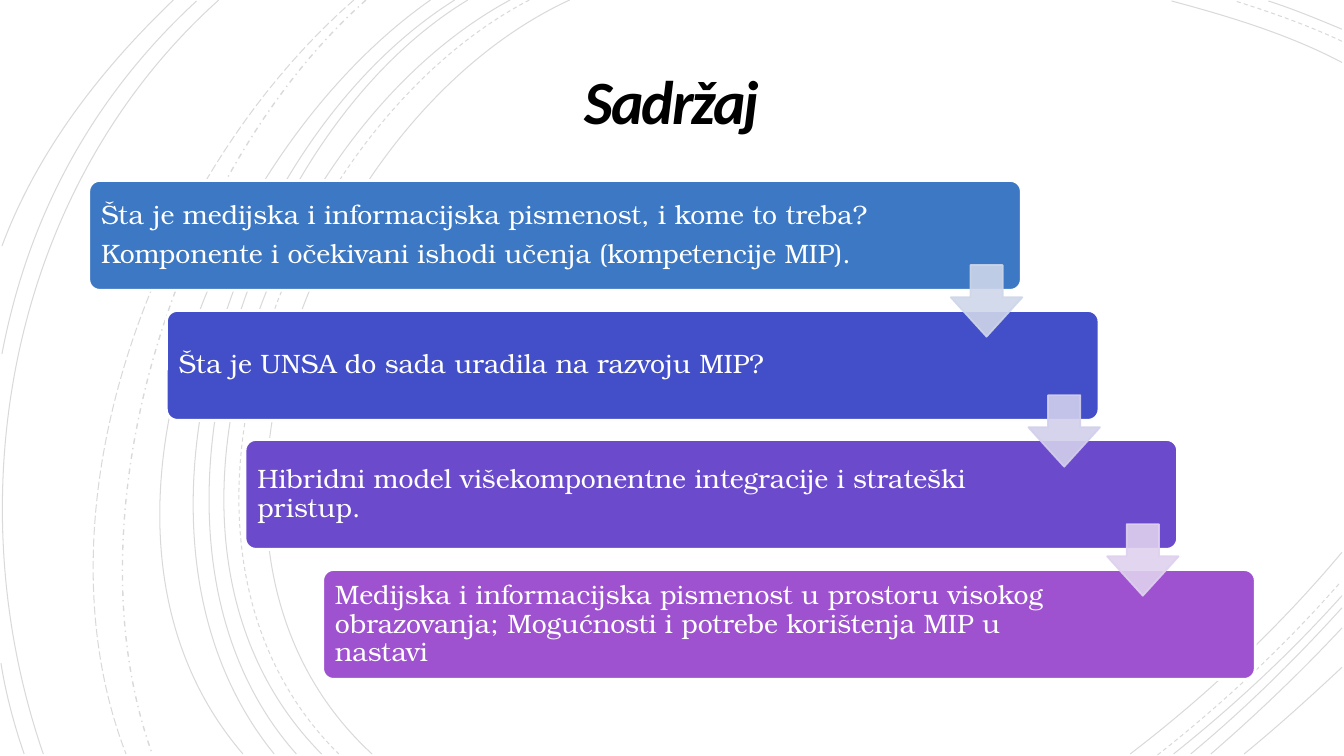
from lxml import etree
from pptx import Presentation, util as u
from pptx.dml import color
from pptx.enum import dml, shapes, text
from pptx.oxml import ns

DASH = dml.MSO_LINE
KIND = shapes.MSO_SHAPE
HALIGN = text.PP_ALIGN


def px(n):
    return u.Emu(n * 9144)  # 100 px to the inch


def rgb(code):
    return color.RGBColor.from_string(code)


def paint(fill, code, alpha=100):
    fill.solid()
    fill.fore_color.rgb = rgb(code)
    if alpha < 100:
        tint = fill._xPr.find(ns.qn("a:solidFill"))[0]
        etree.SubElement(tint, ns.qn("a:alpha"), val=str(alpha * 1000))


def write(shape, lines, font="TeX Gyre Bonum", size=19, ink="FFFFFF", bold=False,
          slant=False, align=HALIGN.LEFT, lead=0.9, after=0, track=0,
          pad=(8, 8, 8, 8)):
    frame = shape.text_frame
    frame.word_wrap = True
    frame.vertical_anchor = text.MSO_ANCHOR.MIDDLE
    (frame.margin_left, frame.margin_top,
     frame.margin_right, frame.margin_bottom) = map(px, pad)
    for i, line in enumerate(lines):
        para = frame.add_paragraph() if i else frame.paragraphs[0]
        para.alignment, para.line_spacing = align, lead
        para.space_after = u.Pt(after)
        run = para.add_run()
        run.text = line
        face = run.font
        face.name, face.size = font, u.Pt(size)
        face.bold, face.italic = bold, slant
        face.color.rgb = rgb(ink)
        if track:
            face._element.set("spc", str(track))


class Deck:
    line = "000000"
    faint = 15

    def __init__(self, wide, high):
        self.show = Presentation()
        self.show.slide_width, self.show.slide_height = px(wide), px(high)
        self.page = self.show.slides.add_slide(self.show.slide_layouts[6])

    def curve(self, points, dash=DASH.SOLID, width=0.75):
        """Draw a cubic curve from start, two handles and end."""
        pen = self.page.shapes.build_freeform(*points[0], scale=9144)
        pen.add_line_segments(points[1:], close=False)
        shape = pen.convert_to_shape()
        shape.shadow.inherit = False
        shape.fill.background()
        paint(shape.line.fill, self.line, self.faint)
        shape.line.width, shape.line.dash_style = u.Pt(width), dash
        # Merge the three segments into one Bezier segment
        track = shape._element.find(".//" + ns.qn("a:path"))
        bend = etree.Element(ns.qn("a:cubicBezTo"))
        for step in track.findall(ns.qn("a:lnTo")):
            bend.append(step[0])
            track.remove(step)
        track.append(bend)

    def label(self, box, lines, **style):
        shape = self.page.shapes.add_textbox(*map(px, box))
        write(shape, lines, **style)

    def block(self, kind, box, adjust, fill, edge, width, alpha=100):
        shape = self.page.shapes.add_shape(kind, *map(px, box))
        shape.shadow.inherit = False
        for i, part in enumerate(adjust):
            shape.adjustments[i] = part
        paint(shape.fill, fill, alpha)
        paint(shape.line.fill, edge, alpha)
        shape.line.width = u.Pt(width)
        return shape


# Background curves: start, two handles, end
SOLID = [
    [(565, 0), (315, 115), (143, 540), (369, 748)],
    [(1331, 62), (1278, 34), (1218, 16), (1162, 1)],
    [(1121, 748), (1197, 690), (1269, 622), (1331, 548)],
    [(506, 0), (270, 127), (110, 537), (319, 748)],
    [(1331, 29), (1307, 19), (1283, 9), (1258, 1)],
    [(1164, 748), (1223, 701), (1280, 648), (1331, 591)],
    [(464, 0), (244, 133), (110, 541), (294, 748)],
    [(1181, 748), (1234, 704), (1284, 655), (1331, 603)],
    [(451, 0), (231, 138), (97, 533), (272, 748)],
    [(1201, 748), (1246, 709), (1290, 667), (1331, 623)],
    [(427, 0), (217, 147), (53, 529), (241, 748)],
    [(1234, 748), (1267, 721), (1299, 692), (1331, 662)],
    [(217, 0), (11, 185), (-46, 490), (43, 748)],
    [(195, 1), (92, 96), (28, 214), (2, 351)],
    [(1, 658), (6, 689), (14, 719), (24, 748)],
    [(172, 0), (100, 69), (37, 150), (2, 244)],
]
DASHED = [
    [(525, 0), (285, 125), (123, 537), (336, 748)],
    [(1331, 41), (1297, 25), (1260, 12), (1225, 1)],
    [(1148, 749), (1213, 698), (1275, 640), (1330, 577)],
]
# Steps: bar colour, right padding, lines
STEPS = [
    ("3C78C3", 127, ["Šta je medijska i informacijska pismenost, i kome to treba?",
                     "Komponente i očekivani ishodi učenja (kompetencije MIP)."]),
    ("434FC8", 156, ["Šta je UNSA do sada uradila na razvoju MIP?"]),
    ("6C4ACC", 156, ["Hibridni model višekomponentne integracije i strateški pristup."]),
    ("9F52D0", 156, ["Medijska i informacijska pismenost u prostoru visokog "
                     "obrazovanja; Mogućnosti i potrebe korištenja MIP u nastavi"]),
]
ARROWS = ["CED6E9", "D2CFEC", "DFD1EE"]


def shift(i):
    return round(i * 77.33), round(i * 128.67)


def main():
    deck = Deck(1333, 750)

    # Background
    for points in SOLID:
        deck.curve(points)
    for points in DASHED:
        deck.curve(points, DASH.DASH)
    deck.curve([(363, 0), (176, 166), (65, 509), (151, 748)], DASH.DASH_DOT, 1)
    deck.curve([(351, 0), (157, 169), (29, 499), (125, 748)], DASH.LONG_DASH)

    # Title
    deck.label((192, 62, 949, 86), ["Sadržaj"], font="Calibri", size=44,
               ink="000000", bold=True, slant=True, align=HALIGN.CENTER,
               lead=0.85, track=-150, pad=(25, 25, 25, 25))

    # Staircase of bars
    for i, (fill, right, lines) in enumerate(STEPS):
        dx, dy = shift(i)
        bar = deck.block(KIND.ROUNDED_RECTANGLE, (88 + dx, 179 + dy, 925, 109),
                         [0.1], fill, "FFFFFF", 2)
        write(bar, lines, after=6.65, pad=(9, 8, right, 8))

    # Arrows between bars
    for i, fill in enumerate(ARROWS):
        dx, dy = shift(i)
        deck.block(KIND.DOWN_ARROW, (943 + dx, 263 + dy, 71, 71),
                   [0.45, 0.55], fill, fill, 1.25, 90)

    deck.show.save("out.pptx")


if __name__ == "__main__":
    main()
